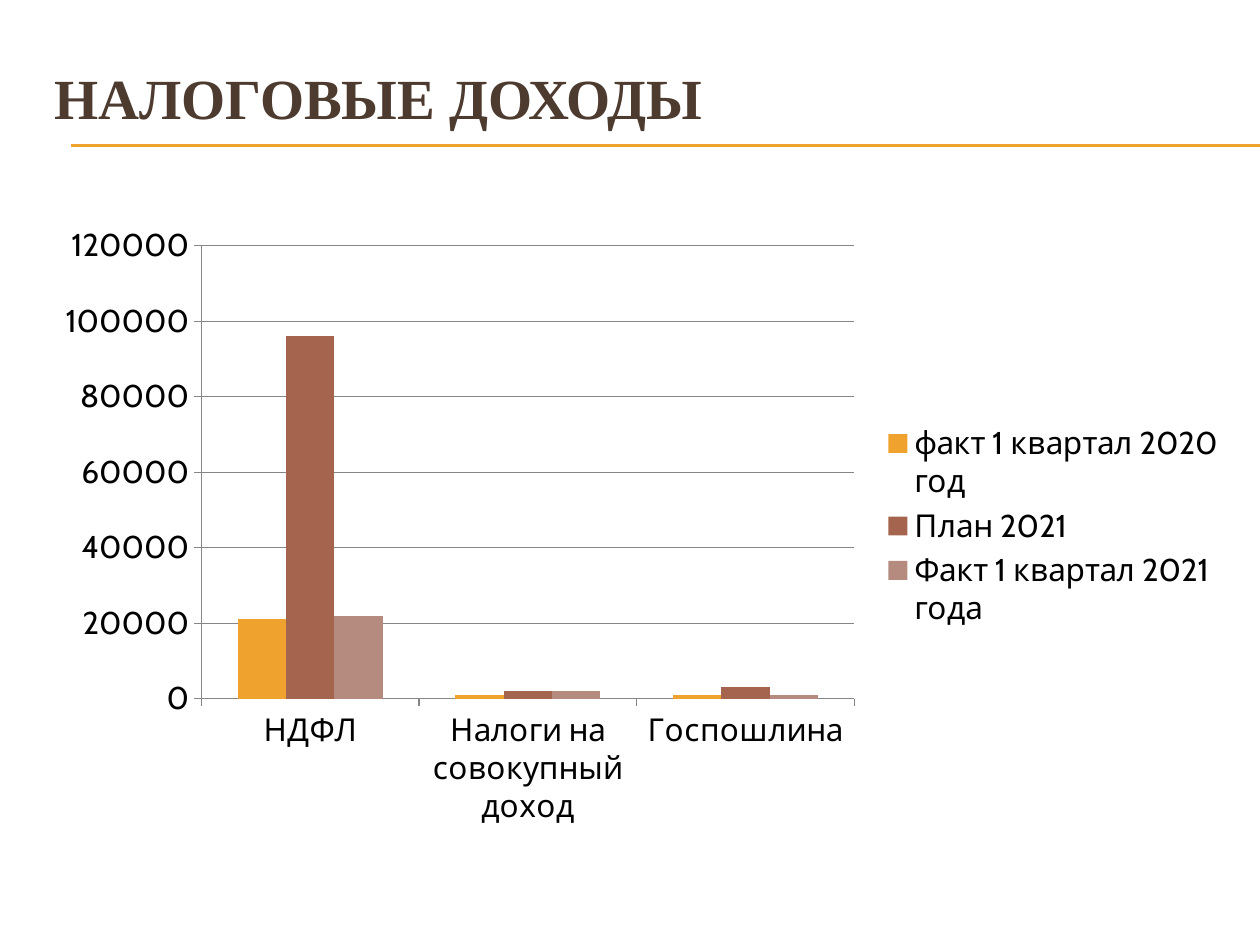
import pptx
import pptx.chart.data
import pptx.dml.color
import pptx.enum.chart
import pptx.enum.shapes
import pptx.enum.text
import pptx.util
from lxml import etree

Inches = pptx.util.Inches
Pt = pptx.util.Pt
RGBColor = pptx.dml.color.RGBColor

GOLD = RGBColor(0xF0, 0xA2, 0x2E)
RUST = RGBColor(0xA5, 0x64, 0x4E)
ROSE = RGBColor(0xB5, 0x8B, 0x80)
BROWN = RGBColor(0x4E, 0x3B, 0x30)
GRAY = RGBColor(0x86, 0x86, 0x86)
BLACK = RGBColor(0, 0, 0)

LEFT, WIDTH = 0.33, 9.5
CATS = ["НДФЛ", "Налоги на совокупный доход", "Госпошлина"]
ROWS = [
    ("факт 1 квартал 2020 год", (21000, 1000, 1000), GOLD),
    ("План 2021", (96000, 2000, 3000), RUST),
    ("Факт 1 квартал 2021 года", (22000, 2000, 1000), ROSE),
]


class Page:
    head_font = "Times New Roman"
    body_font = "Cabin"

    def __init__(self, deck):
        self.slide = deck.slides.add_slide(deck.slide_layouts[5])

    def title(self, text, top, height):
        box = self.slide.shapes.title
        box.left, box.top = Inches(LEFT), Inches(top)
        box.width, box.height = Inches(WIDTH), Inches(height)
        frame = box.text_frame
        frame.vertical_anchor = pptx.enum.text.MSO_ANCHOR.TOP
        frame.margin_top = 0
        para = frame.paragraphs[0]
        para.alignment = pptx.enum.text.PP_ALIGN.LEFT
        run = para.add_run()
        run.text = text
        font = run.font
        font.name, font.size, font.bold = self.head_font, Pt(32.4), True
        font.color.rgb = BROWN

    def rule(self, y):
        """Draw a thin line from the left margin to the slide's right edge."""
        line = self.slide.shapes.add_connector(
            pptx.enum.shapes.MSO_CONNECTOR.STRAIGHT,
            Inches(0.56), Inches(y), Inches(10), Inches(y))
        line.line.color.rgb = GOLD
        line.line.width = Pt(0.75)
        props = line._element.spPr
        etree.SubElement(props, pptx.oxml.ns.qn("a:effectLst"))

    def chart(self, cats, rows, top, height):
        data = pptx.chart.data.CategoryChartData()
        data.categories = cats
        for name, vals, _ in rows:
            data.add_series(name, vals)
        chart = self.slide.shapes.add_chart(
            pptx.enum.chart.XL_CHART_TYPE.COLUMN_CLUSTERED,
            Inches(LEFT), Inches(top), Inches(WIDTH), Inches(height), data).chart
        chart.has_title = False
        chart.font.name, chart.font.size = self.body_font, Pt(18)
        chart.font.color.rgb = BLACK

        chart.has_legend = True
        chart.legend.position = pptx.enum.chart.XL_LEGEND_POSITION.RIGHT
        chart.legend.include_in_layout = False

        plot = chart.plots[0]
        plot.gap_width = 150
        plot.vary_by_categories = False
        for series, (_, _, color) in zip(plot.series, rows):
            series.format.fill.solid()
            series.format.fill.fore_color.rgb = color

        scale = chart.value_axis
        scale.minimum_scale, scale.maximum_scale = 0, 120000
        scale.major_unit = 20000
        scale.has_major_gridlines = True
        for part in (scale, chart.category_axis, scale.major_gridlines):
            part.format.line.color.rgb = GRAY
            part.format.line.width = Pt(0.75)


def main():
    deck = pptx.Presentation()
    deck.slide_width, deck.slide_height = Inches(10), Inches(7.5)
    page = Page(deck)
    for y in (1.15, 1.16):
        page.rule(y)
    page.title("НАЛОГОВЫЕ ДОХОДЫ", 0.5, 0.92)
    page.chart(CATS, ROWS, 1.7, 4.95)
    deck.save("out.pptx")


if __name__ == "__main__":
    main()
